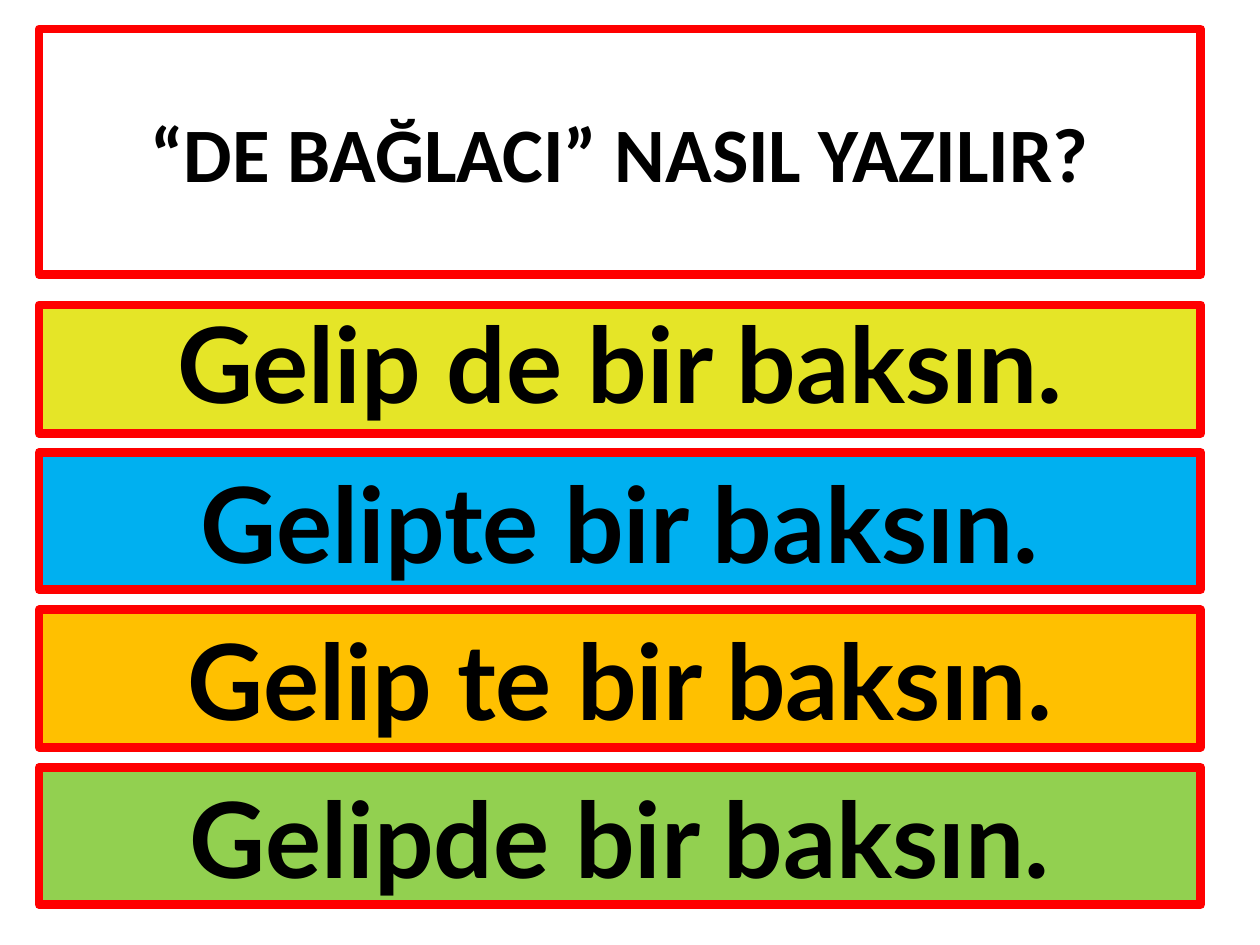
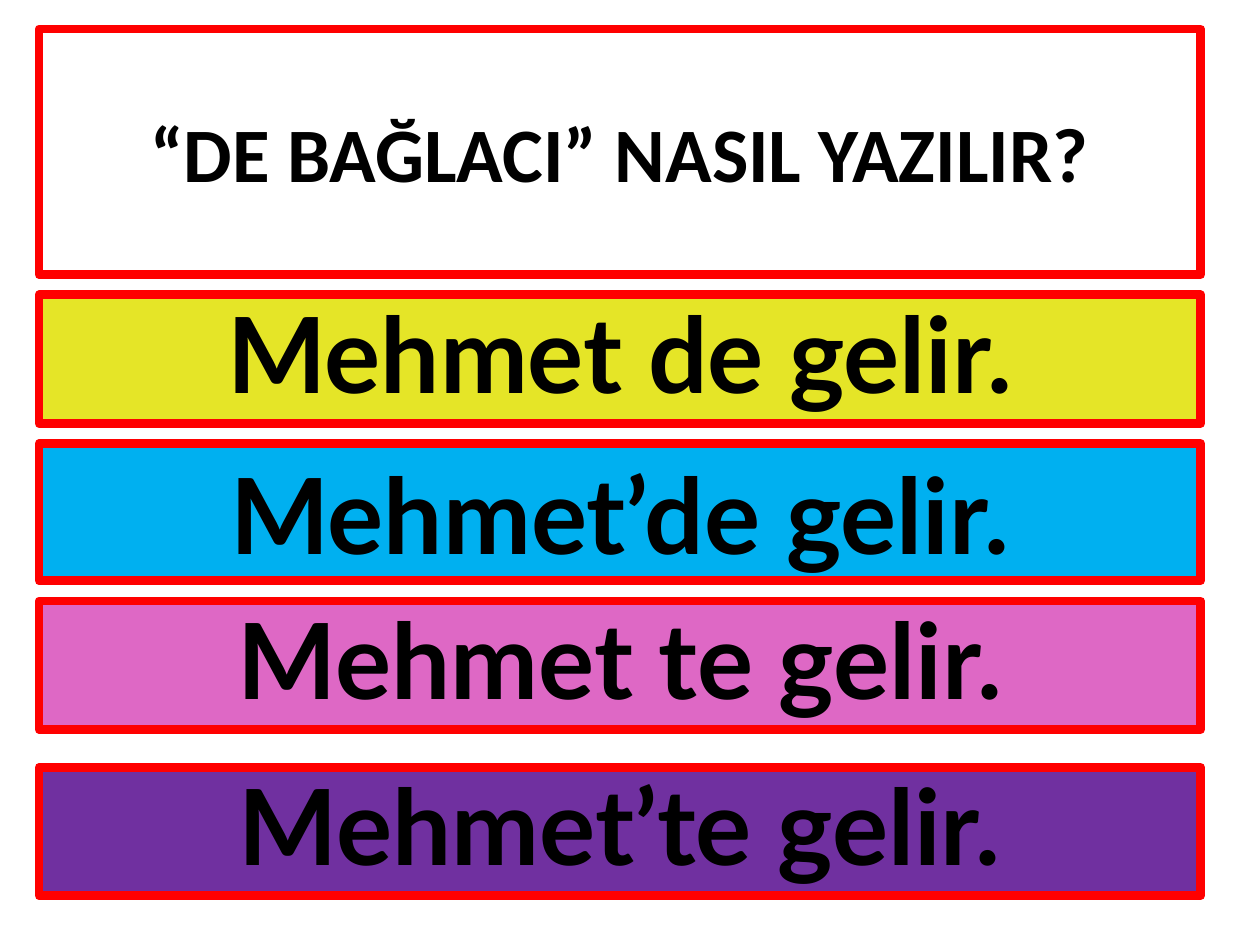
from pptx import Presentation
from pptx.dml.color import RGBColor
from pptx.enum.shapes import MSO_SHAPE
from pptx.enum.text import MSO_ANCHOR, PP_ALIGN
from pptx.util import Inches, Pt

RECT = MSO_SHAPE.RECTANGLE
MIDDLE = MSO_ANCHOR.MIDDLE
CENTER = PP_ALIGN.CENTER

BLACK, RED = "000000", "FF0000"
YELLOW, BLUE, ORANGE = "E5E527", "00B0F0", "FFC000"
GREEN, PINK, PURPLE = "92D050", "DE68C5", "7030A0"

TITLE = "“DE BAĞLACI” NASIL YAZILIR?"
TALL, SHORT = 1.09, 1.02
SLIDES = [
    [
        ("Gelip de bir baksın.", YELLOW, 2.42, SHORT),
        ("Gelipte bir baksın.", BLUE, 3.59, TALL),
        ("Gelip te bir baksın.", ORANGE, 4.84, TALL),
        ("Gelipde bir baksın.", GREEN, 6.09, TALL),
    ],
    [
        ("Mehmet de gelir.", YELLOW, 2.34, SHORT),
        ("Mehmet’de gelir.", BLUE, 3.52, TALL),
        ("Mehmet te gelir.", PINK, 4.77, SHORT),
        ("Mehmet’te gelir.", PURPLE, 6.09, SHORT),
    ],
]


def rgb(value):
    """Return the colour for a hex string."""
    return RGBColor.from_string(value)


class Deck:
    """Hold the shared style and the current slide."""

    left, width = 0.31, 9.22

    def __init__(self):
        """Start an empty 4:3 presentation."""
        self.prs = Presentation()
        self.prs.slide_width = Inches(10)
        self.prs.slide_height = Inches(7.5)
        self.s = None

    def new_slide(self):
        """Add a blank slide and make it current."""
        self.s = self.prs.slides.add_slide(self.prs.slide_layouts[6])

    def box(self, text, top, height, font, size):
        """Add a red-framed box with centred bold text."""
        sp = self.s.shapes.add_shape(
            RECT, Inches(self.left), Inches(top), Inches(self.width), Inches(height))
        sp.shadow.inherit = False
        sp.fill.background()
        sp.line.color.rgb = rgb(RED)
        sp.line.width = Pt(5)
        tf = sp.text_frame
        tf.word_wrap = True
        tf.vertical_anchor = MIDDLE
        p = tf.paragraphs[0]
        p.text = text
        p.alignment = CENTER
        r = p.runs[0]
        r.font.name = font
        r.font.size = Pt(size)
        r.font.bold = True
        r.font.color.rgb = rgb(BLACK)
        return sp

    def title(self, text):
        """Add the title box."""
        self.box(text, 0.23, 1.95, "Calibri", 44)

    def sentence(self, text, color, top, height):
        """Add a coloured sentence bar, with tighter lines in short bars."""
        sp = self.box(text, top, height, "Lato", 60)
        sp.fill.solid()
        sp.fill.fore_color.rgb = rgb(color)
        if height == SHORT:
            sp.text_frame.paragraphs[0].line_spacing = 0.9


def main():
    """Build and save the slides."""
    deck = Deck()
    for sentences in SLIDES:
        deck.new_slide()
        deck.title(TITLE)
        for sentence in sentences:
            deck.sentence(*sentence)
    deck.prs.save("out.pptx")


if __name__ == "__main__":
    main()
